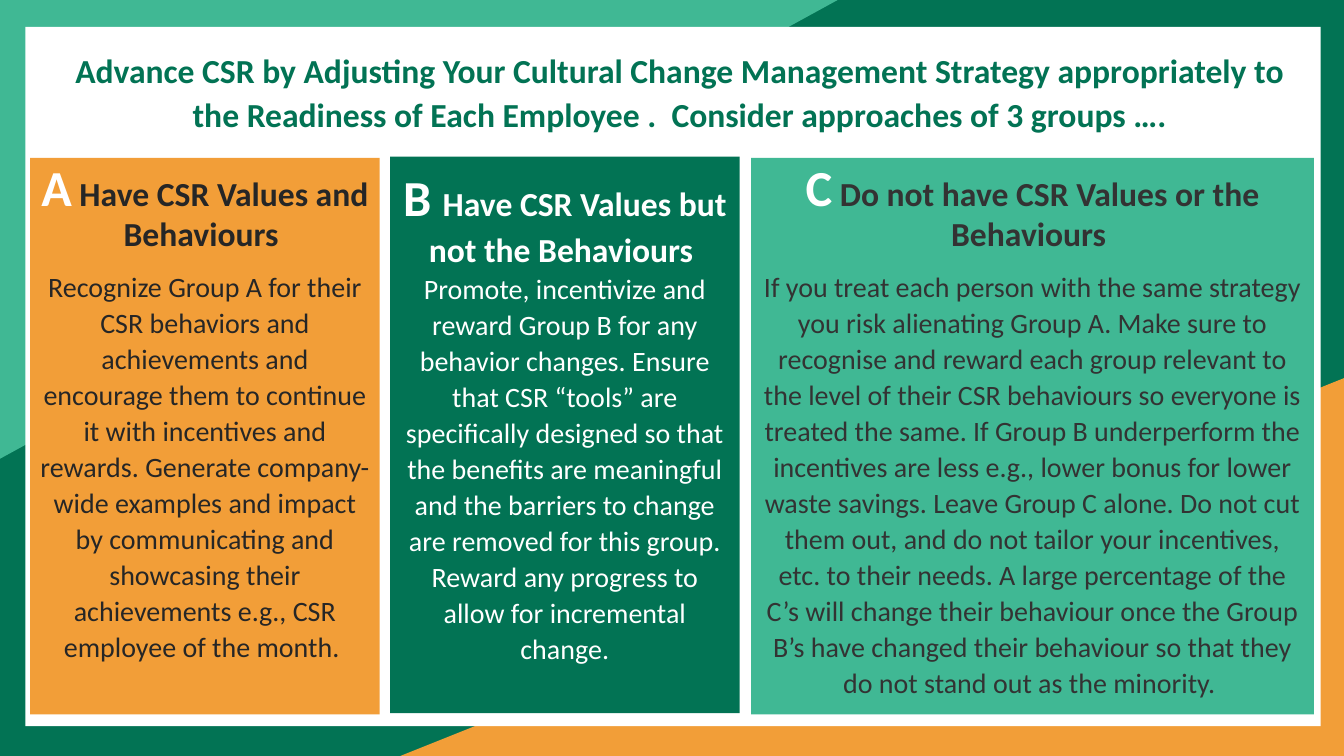
from dataclasses import dataclass

from pptx import Presentation
from pptx.dml.color import RGBColor
from pptx.enum.shapes import MSO_SHAPE as Preset
from pptx.enum.text import MSO_ANCHOR as Anchor, MSO_AUTO_SIZE as AutoSize, PP_ALIGN as Align
from pptx.shapes.autoshape import Shape
from pptx.slide import Slide
from pptx.text.text import TextFrame, _Paragraph as Paragraph
from pptx.util import Cm, Pt

COLOURS = {
    "green": "027354",
    "mint": "40B894",
    "orange": "F29E38",
    "white": "FFFFFF",
    "black": "262626",
    "grey": "333333",
}
FONT = "Calibri"
HEADING_SIZE, LETTER_SIZE, BODY_SIZE = 24, 36, 20
BODY_SPACING = 1.07
TITLE = (
    "Advance CSR by Adjusting Your Cultural Change Management Strategy appropriately to "
    "the Readiness of Each Employee .  Consider approaches of 3 groups …."
)


@dataclass(frozen=True)
class Block:
    """A plain filled shape of the backdrop; lengths in centimetres."""
    preset: Preset
    left: float
    top: float
    width: float
    height: float
    fill: str
    rotation: int = 0


@dataclass(frozen=True)
class Group:
    """One employee group and the card that describes it."""
    letter: str
    heading: str
    body: str
    left: float
    top: float
    width: float
    fill: str
    ink: str
    heading_spacing: float = 0.9
    space_before: int = 10


CARD_HEIGHT = 14.02

BACKDROP = [
    Block(Preset.RECTANGLE, 0, 0, 33.87, 19.05, "green"),
    Block(Preset.ISOSCELES_TRIANGLE, 10.09, 9.53, 23.78, 9.52, "orange"),
    Block(Preset.ISOSCELES_TRIANGLE, 0, 0, 21.11, 11.56, "mint", 180),
    Block(Preset.RECTANGLE, 0.64, 0.68, 32.64, 17.62, "white"),
]

GROUPS = [
    Group(
        "A", " Have CSR Values and Behaviours ",
        "Recognize Group A for their CSR behaviors and achievements and encourage them to "
        "continue it with incentives and rewards. Generate company-wide examples and impact "
        "by communicating and showcasing their achievements e.g., CSR employee of the month. ",
        0.76, 3.98, 8.81, "orange", "black",
    ),
    Group(
        "B ", "Have CSR Values but not the Behaviours ",
        "Promote, incentivize and reward Group B for any behavior changes. Ensure that CSR "
        "“tools” are specifically designed so that the benefits are meaningful and the "
        "barriers to change are removed for this group. Reward any progress to allow for "
        "incremental change.",
        9.83, 3.95, 8.81, "green", "white", BODY_SPACING, 0,
    ),
    Group(
        "C", " Do not have CSR Values or the Behaviours ",
        "If you treat each person with the same strategy you risk alienating Group A. Make "
        "sure to recognise and reward each group relevant to the level of their CSR "
        "behaviours so everyone is treated the same. If Group B underperform the incentives "
        "are less e.g., lower bonus for lower waste savings. Leave Group C alone. Do not cut "
        "them out, and do not tailor your incentives, etc. to their needs. A large percentage "
        "of the C’s will change their behaviour once the Group B’s have changed their "
        "behaviour so that they do not stand out as the minority. ",
        18.93, 3.98, 14.18, "mint", "grey",
    ),
]


def colour(name: str) -> RGBColor:
    return RGBColor.from_string(COLOURS[name])


def add_block(slide: Slide, block: Block) -> Shape:
    shape = slide.shapes.add_shape(
        block.preset, Cm(block.left), Cm(block.top), Cm(block.width), Cm(block.height)
    )
    if block.preset == Preset.ISOSCELES_TRIANGLE:
        shape.adjustments[0] = 1
    shape.rotation = block.rotation
    shape.shadow.inherit = False
    shape.fill.solid()
    shape.fill.fore_color.rgb = colour(block.fill)
    shape.line.fill.background()
    return shape


def set_frame(frame: TextFrame) -> None:
    frame.word_wrap = True
    frame.auto_size = AutoSize.NONE
    frame.vertical_anchor = Anchor.TOP


def set_spacing(para: Paragraph, lines: float, before: float, after: float) -> None:
    para.alignment = Align.CENTER
    para.line_spacing = lines
    para.space_before, para.space_after = Pt(before), Pt(after)


def add_span(para: Paragraph, text: str, size: int, ink: str, bold: bool) -> None:
    span = para.add_run()
    span.text = text
    span.font.name, span.font.size, span.font.bold = FONT, Pt(size), bold
    span.font.color.rgb = colour(ink)


def add_title(slide: Slide) -> None:
    title = slide.shapes.title
    title.left, title.top, title.width, title.height = Cm(1.14), Cm(1.07), Cm(31.98), Cm(3.73)
    set_frame(title.text_frame)
    para = title.text_frame.paragraphs[0]
    set_spacing(para, BODY_SPACING, 10, 8.7)
    add_span(para, TITLE, HEADING_SIZE, "green", True)
    # Bring the title in front of the backdrop.
    title.element.getparent().append(title.element)


def add_card(slide: Slide, group: Group) -> None:
    card = add_block(slide, Block(
        Preset.RECTANGLE, group.left, group.top, group.width, CARD_HEIGHT, group.fill
    ))
    frame = card.text_frame
    set_frame(frame)
    heading = frame.paragraphs[0]
    set_spacing(heading, group.heading_spacing, group.space_before, 0)
    add_span(heading, group.letter, LETTER_SIZE, "white", True)
    add_span(heading, group.heading, HEADING_SIZE, group.ink, True)
    body = frame.add_paragraph()
    set_spacing(body, BODY_SPACING, group.space_before, 8.7)
    add_span(body, group.body, BODY_SIZE, group.ink, False)


def main() -> None:
    deck = Presentation()
    deck.slide_width, deck.slide_height = Cm(33.87), Cm(19.05)
    slide = deck.slides.add_slide(deck.slide_layouts.get_by_name("Title Only"))
    for block in BACKDROP:
        add_block(slide, block)
    add_title(slide)
    for group in GROUPS:
        add_card(slide, group)
    deck.save("out.pptx")


if __name__ == "__main__":
    main()
